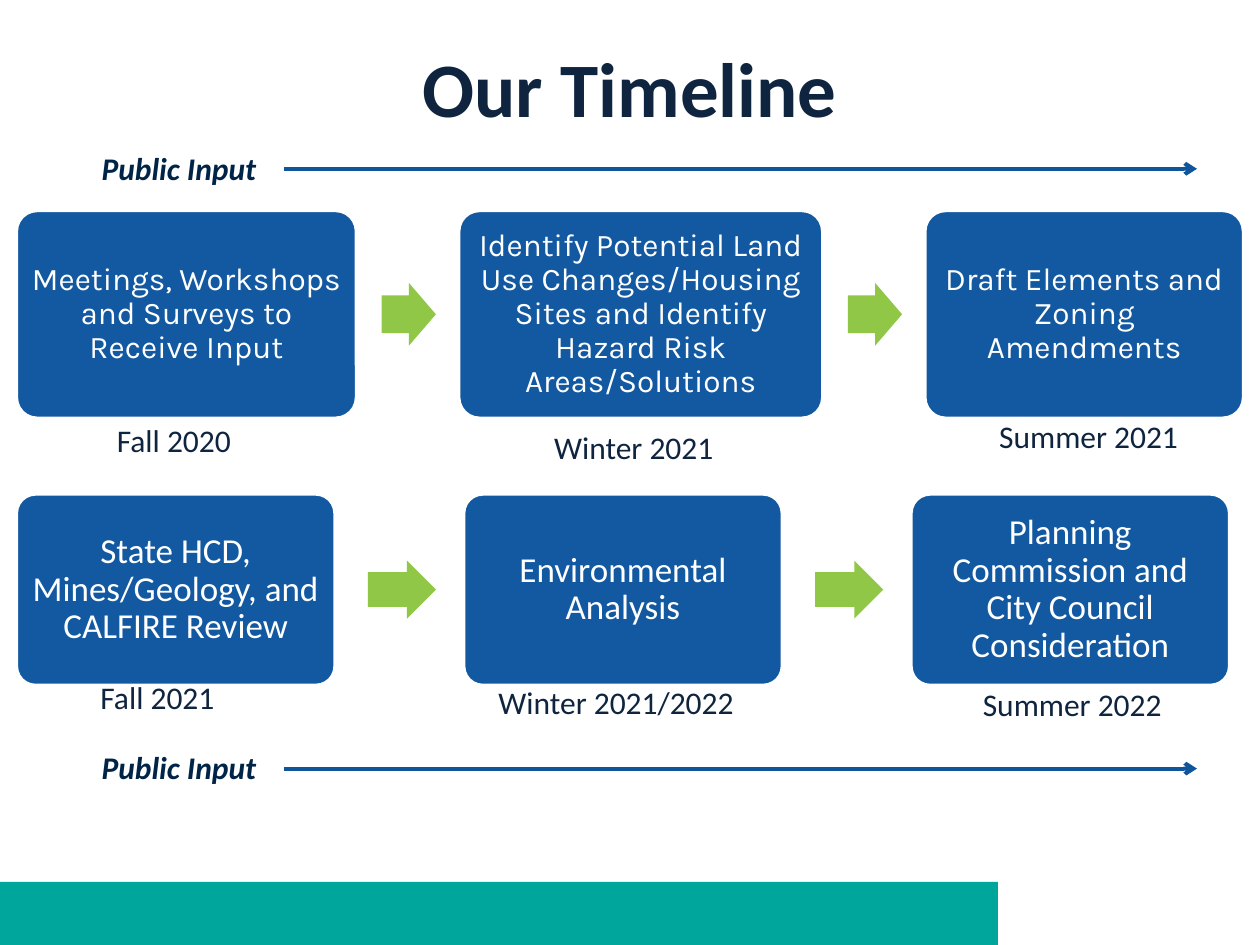
from lxml import etree
from pptx import Presentation
from pptx import util as u
from pptx.dml.color import RGBColor
from pptx.enum import shapes, text
from pptx.oxml.ns import qn

THEME = {
    "navy": "0F243E", "label": "002448", "card": "1359A1", "line": "0F559B",
    "arrow": "91C747", "band": "00A69C", "white": "FFFFFF",
    "body": "Calibri", "accent": "Karla",
    "title_pt": 44, "card_pt": 20, "small_pt": 18,
}

prs = Presentation()
prs.slide_width, prs.slide_height = u.Inches(10), u.Inches(7.5)
COL, ROW = prs.slide_width / 100, prs.slide_height / 75  # grid of 100 x 75
s = prs.slides.add_slide(prs.slide_layouts[5])


def grid(x, y, w, h):
    """Turn columns and rows into left, top, width and height."""
    return int(x * COL), int(y * ROW), int(w * COL), int(h * ROW)


def write(sp, words, size, color, font=THEME["body"], bold=False, italic=False,
          anchor=text.MSO_ANCHOR.MIDDLE):
    """Put one centred run in a shape and return its paragraph."""
    tf = sp.text_frame
    tf.word_wrap, tf.vertical_anchor = True, anchor
    tf.auto_size = text.MSO_AUTO_SIZE.NONE
    p = tf.paragraphs[0]
    p.alignment = text.PP_ALIGN.CENTER
    r = p.add_run()
    r.text = words
    r.font.name, r.font.size = font, u.Pt(size)
    r.font.bold, r.font.italic = bold, italic
    r.font.color.rgb = RGBColor.from_string(color)
    return p


title = s.shapes.title
title.left, title.top, title.width, title.height = grid(5, 0.6, 90, 12.5)
write(title, "Our Timeline", THEME["title_pt"], THEME["navy"], bold=True)

band = s.shapes.add_shape(shapes.MSO_SHAPE.RECTANGLE, *grid(0, 70, 79.2, 5))
band.shadow.inherit = False
band.fill.solid()
band.fill.fore_color.rgb = RGBColor.from_string(THEME["band"])
band.line.fill.background()

# Each step: card width, card text, date, centre and top of the date
phases = [
    {"top": 16.7, "height": 16.5, "gap": 8.1, "arrow": (2, 4.3, 5), "inset": 0.07,
     "font": THEME["accent"], "size": THEME["small_pt"], "steps": [
         (27, "Meetings, Workshops and Surveys to Receive Input",
          "Fall 2020", 13.8, 32.9),
         (28.9, "Identify Potential Land Use Changes/Housing Sites and "
                "Identify Hazard Risk Areas/Solutions", "Winter 2021", 50.3, 33.5),
         (25.3, "Draft Elements and Zoning Amendments",
          "Summer 2021", 86.4, 32.6)]},
    {"top": 39.2, "height": 15.2, "gap": 10.2, "arrow": (2.6, 5.4, 4.6), "inset": 0.08,
     "font": THEME["body"], "size": THEME["card_pt"], "steps": [
         (25.3, "State HCD, Mines/Geology, and CALFIRE Review",
          "Fall 2021", 12.5, 53.3),
         (25.3, "Environmental Analysis", "Winter 2021/2022", 48.9, 53.7),
         (25.3, "Planning Commission and City Council Consideration",
          "Summer 2022", 85.1, 53.9)]},
]

for phase in phases:
    x, top, height = 1.3, phase["top"], phase["height"]
    lead, arrow_w, arrow_h = phase["arrow"]
    for i, (width, words, date, centre, date_top) in enumerate(phase["steps"]):
        card = s.shapes.add_shape(shapes.MSO_SHAPE.ROUNDED_RECTANGLE,
                                  *grid(x, top, width, height))
        card.adjustments[0] = 0.1
        card.shadow.inherit = False
        card.fill.solid()
        card.fill.fore_color.rgb = RGBColor.from_string(THEME["card"])
        card.line.color.rgb = RGBColor.from_string(THEME["white"])
        card.line.width = u.Pt(2)
        tf = card.text_frame
        tf.margin_left = tf.margin_right = u.Inches(phase["inset"])
        tf.margin_top = tf.margin_bottom = u.Inches(phase["inset"])
        p = write(card, words, phase["size"], THEME["white"], phase["font"])
        p.line_spacing = 0.9

        caption = s.shapes.add_textbox(*grid(centre - 10.4, date_top, 20.8, 4))
        write(caption, date, THEME["small_pt"], THEME["navy"],
              anchor=text.MSO_ANCHOR.TOP)

        if i < len(phase["steps"]) - 1:
            arrow = s.shapes.add_shape(
                shapes.MSO_SHAPE.RIGHT_ARROW,
                *grid(x + width + lead, top + (height - arrow_h) / 2, arrow_w, arrow_h))
            arrow.adjustments[0], arrow.adjustments[1] = 0.6, 0.5
            arrow.shadow.inherit = False
            arrow.fill.solid()
            arrow.fill.fore_color.rgb = RGBColor.from_string(THEME["arrow"])
            arrow.line.fill.background()
        x += width + phase["gap"]

for y in (13.4, 61):
    label = s.shapes.add_textbox(*grid(4.2, y - 2.1, 20, 4.2))
    write(label, "Public Input", THEME["small_pt"], THEME["label"],
          bold=True, italic=True, anchor=text.MSO_ANCHOR.TOP)
    start_x, start_y, length, _ = grid(22.5, y, 72.5, 0)
    line = s.shapes.add_connector(shapes.MSO_CONNECTOR.STRAIGHT,
                                  start_x, start_y, start_x + length, start_y)
    line.line.color.rgb = RGBColor.from_string(THEME["line"])
    line.line.width = u.Pt(2.25)
    etree.SubElement(line.line._get_or_add_ln(), qn("a:tailEnd"), type="arrow")
    etree.SubElement(line._element.spPr, qn("a:effectLst"))

prs.save("out.pptx")
